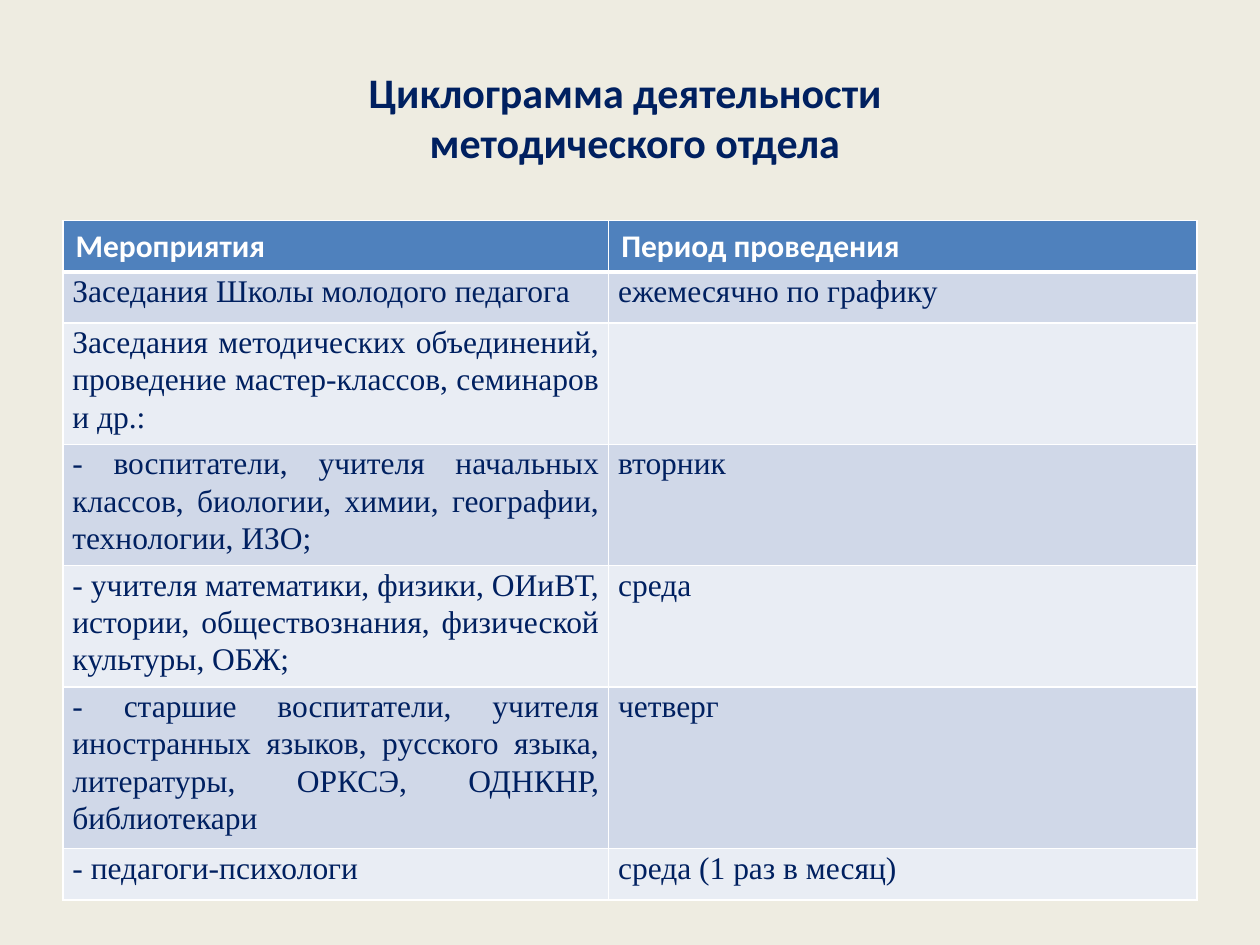
from lxml.etree import SubElement
from pptx import Presentation
from pptx.dml.color import RGBColor
from pptx.enum.text import MSO_ANCHOR, PP_ALIGN
from pptx.oxml.ns import qn
from pptx.util import Cm, Pt

TITLE = "Циклограмма деятельности \v методического отдела"
HEADERS = ("Мероприятия", "Период проведения")
ACTIVITIES = [
    ("Заседания Школы молодого педагога", "ежемесячно по графику"),
    ("Заседания методических объединений, проведение мастер-классов, семинаров и др.:", ""),
    ("- воспитатели, учителя начальных классов, биологии, химии, географии, "
     "технологии, ИЗО;", "вторник"),
    ("- учителя математики, физики, ОИиВТ, истории, обществознания, физической "
     "культуры, ОБЖ;", "среда "),
    ("- старшие воспитатели, учителя иностранных языков, русского языка, литературы, "
     "ОРКСЭ, ОДНКНР, библиотекари", "четверг"),
    ("- педагоги-психологи ", "среда (1 раз в месяц)"),
]
COLORS = {
    "background": "EEECE1",
    "text": "002060",
    "header": "4F81BD",
    "header_text": "FFFFFF",
    "border": "FFFFFF",
    "odd_row": "D0D8E8",
    "even_row": "E9EDF4",
}
LEFT = Cm(1.27)
COLUMN_WIDTHS = (Cm(11), Cm(11.86))
ROW_HEIGHT = Cm(1.03)


def color(name):
    return RGBColor.from_string(COLORS[name])


def set_font(target, name, size, color_name, bold=False):
    """Style a paragraph or a run."""
    font = target.font
    font.name, font.size, font.bold = name, Pt(size), bold
    font.color.rgb = color(color_name)


def fill_cell(cell, text, fill_name):
    """Write the text and colour the cell; return its paragraph."""
    cell.text = text
    cell.fill.solid()
    cell.fill.fore_color.rgb = color(fill_name)
    return cell.text_frame.paragraphs[0]


def set_borders(cell, widths):
    """Draw borders given as (tag, points), in schema order before the fill."""
    properties = cell._tc.get_or_add_tcPr()
    for position, (tag, points) in enumerate(widths):
        line = SubElement(properties, qn(tag), w=str(Pt(points)))
        fill = SubElement(line, qn("a:solidFill"))
        SubElement(fill, qn("a:srgbClr"), val=COLORS["border"])
        properties.insert(position, line)


def add_title(slide):
    box = slide.shapes.add_textbox(LEFT, Cm(0.76), sum(COLUMN_WIDTHS), Cm(3.18))
    frame = box.text_frame
    frame.word_wrap = True
    frame.vertical_anchor = MSO_ANCHOR.MIDDLE
    paragraph = frame.paragraphs[0]
    paragraph.text = TITLE
    paragraph.alignment = PP_ALIGN.CENTER
    set_font(paragraph, "Calibri", 24, "text", bold=True)


def add_schedule(slide):
    row_count = len(ACTIVITIES) + 1
    table = slide.shapes.add_table(
        row_count, len(HEADERS), LEFT, Cm(4.45),
        sum(COLUMN_WIDTHS), ROW_HEIGHT * row_count).table
    for column, width in zip(table.columns, COLUMN_WIDTHS):
        column.width = width
    for row in table.rows:
        row.height = ROW_HEIGHT

    for column, text in enumerate(HEADERS):
        cell = table.cell(0, column)
        paragraph = fill_cell(cell, text, "header")
        set_font(paragraph, "Calibri", 18, "header_text", bold=True)
        set_borders(cell, (("a:lnL", 1), ("a:lnR", 1), ("a:lnT", 1), ("a:lnB", 3)))

    for row, texts in enumerate(ACTIVITIES, start=1):
        for column, text in enumerate(texts):
            cell = table.cell(row, column)
            paragraph = fill_cell(cell, text, "odd_row" if row % 2 else "even_row")
            cell.margin_left = cell.margin_right = Cm(0.19)
            cell.margin_top = cell.margin_bottom = 0
            paragraph.alignment = PP_ALIGN.JUSTIFY
            paragraph.line_spacing = 1.07
            # Row heights follow the run fonts, not the paragraph default.
            for run in paragraph.runs:
                set_font(run, "Times New Roman", 18, "text")


def main():
    presentation = Presentation()
    presentation.slide_width, presentation.slide_height = Cm(25.4), Cm(19.05)
    slide = presentation.slides.add_slide(presentation.slide_layouts[6])
    background = slide.background.fill
    background.solid()
    background.fore_color.rgb = color("background")
    add_title(slide)
    add_schedule(slide)
    presentation.save("out.pptx")


if __name__ == "__main__":
    main()
